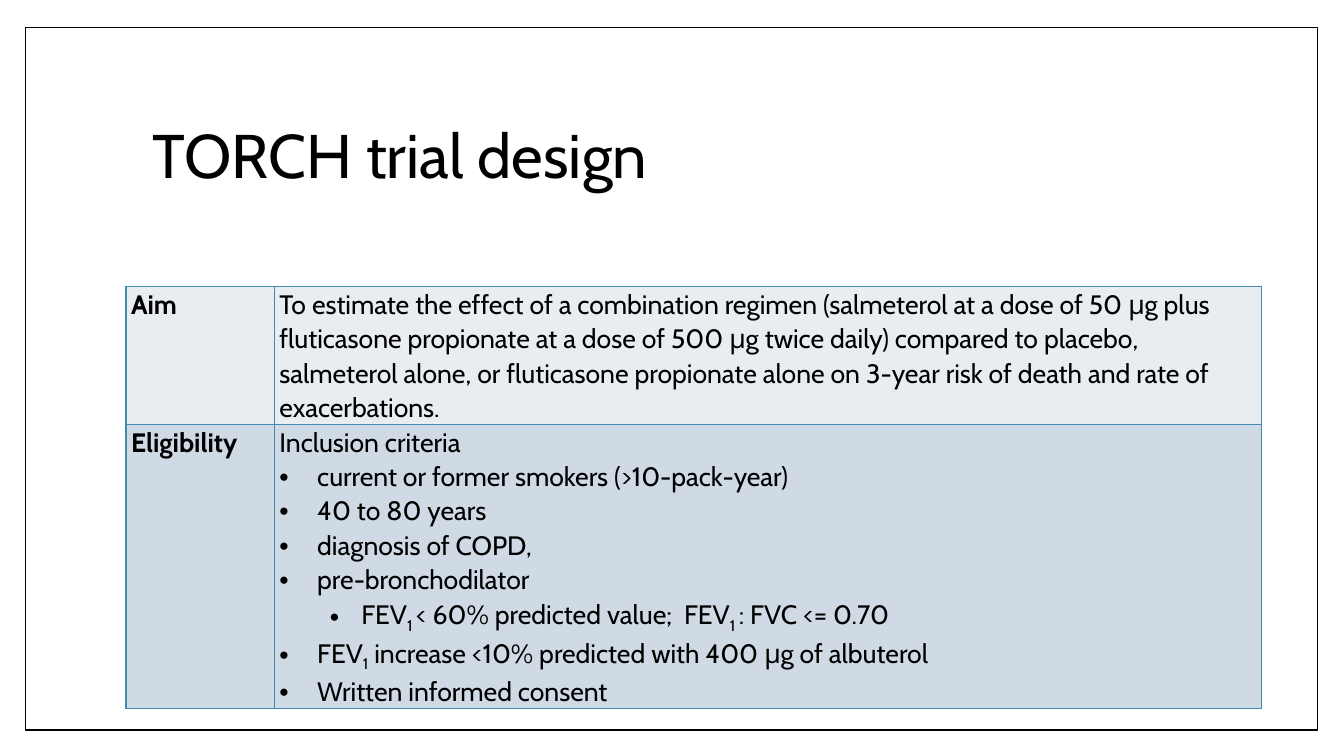
from dataclasses import dataclass

from lxml import etree
from pptx import Presentation
from pptx.dml.color import RGBColor
from pptx.enum.shapes import MSO_SHAPE
from pptx.enum.text import MSO_ANCHOR
from pptx.oxml.ns import qn
from pptx.slide import Slide
from pptx.table import _Cell
from pptx.text.text import TextFrame, _Paragraph
from pptx.util import Pt

RECTANGLE = MSO_SHAPE.RECTANGLE
MIDDLE = MSO_ANCHOR.MIDDLE

BLACK = RGBColor(0x00, 0x00, 0x00)
WHITE = RGBColor(0xFF, 0xFF, 0xFF)
BORDER_BLUE = RGBColor(0x41, 0x8A, 0xB3)
LIGHT_BAND = RGBColor(0xE9, 0xED, 0xF2)
DARK_BAND = RGBColor(0xCF, 0xDA, 0xE5)

FONT = "Cabin"
TITLE_SIZE = Pt(44)
BODY_SIZE = Pt(19)
COLUMN_WIDTHS = (Pt(106), Pt(705))
# Left margin and first-line indent of each bullet level
BULLET_INDENTS = ((Pt(27), Pt(-27)), (Pt(58.5), Pt(-22.5)))


@dataclass(frozen=True)
class Run:
    text: str
    subscript: bool = False


@dataclass(frozen=True)
class Line:
    runs: tuple[Run, ...]
    level: int | None = None  # None means no bullet


@dataclass(frozen=True)
class Row:
    label: str
    lines: tuple[Line, ...]
    fill: RGBColor
    height: Pt


def line(text: str, level: int | None = None) -> Line:
    return Line((Run(text),), level)


ROWS = (
    Row(
        "Aim",
        (
            line(
                "To estimate the effect of a combination regimen (salmeterol at a dose "
                "of 50 μg plus fluticasone propionate at a dose of 500 μg twice daily) "
                "compared to placebo, salmeterol alone, or fluticasone propionate alone "
                "on 3-year risk of death and rate of exacerbations."
            ),
        ),
        LIGHT_BAND,
        Pt(98),
    ),
    Row(
        "Eligibility",
        (
            line("Inclusion criteria"),
            line("current or former smokers (>10-pack-year)", 0),
            line("40 to 80 years", 0),
            line("diagnosis of COPD,", 0),
            line("pre-bronchodilator", 0),
            Line(
                (
                    Run("FEV"),
                    Run("1 ", subscript=True),
                    Run("< 60% predicted value;  FEV"),
                    Run("1 ", subscript=True),
                    Run(": FVC <= 0.70"),
                ),
                1,
            ),
            Line(
                (
                    Run("FEV"),
                    Run("1", subscript=True),
                    Run(" increase <10% predicted with 400 μg of albuterol"),
                ),
                0,
            ),
            line("Written informed consent", 0),
        ),
        DARK_BAND,
        Pt(202),
    ),
)


def add_run(p: _Paragraph, run: Run, size: Pt, bold: bool = False) -> None:
    r = p.add_run()
    r.text = run.text
    r.font.name = FONT
    r.font.size = size
    r.font.bold = bold
    r.font.color.rgb = BLACK
    if run.subscript:
        r._r.get_or_add_rPr().set("baseline", "-25000")


def add_bullet(p: _Paragraph, level: int) -> None:
    margin, indent = BULLET_INDENTS[level]
    p.level = level
    pPr = p._p.get_or_add_pPr()
    pPr.set("marL", str(margin))
    pPr.set("indent", str(indent))
    etree.SubElement(pPr, qn("a:buFont"), typeface="Arial")
    etree.SubElement(pPr, qn("a:buChar"), char="•")


def write_lines(tf: TextFrame, lines: tuple[Line, ...], bold: bool) -> None:
    for i, item in enumerate(lines):
        p = tf.add_paragraph() if i else tf.paragraphs[0]
        p.line_spacing = 1.07
        if item.level is not None:
            add_bullet(p, item.level)
        for run in item.runs:
            add_run(p, run, BODY_SIZE, bold)


def add_borders(cell: _Cell) -> None:
    tcPr = cell._tc.get_or_add_tcPr()
    for side in ("lnL", "lnR", "lnT", "lnB"):
        ln = etree.SubElement(tcPr, qn(f"a:{side}"), w=str(Pt(1)))
        solid = etree.SubElement(ln, qn("a:solidFill"))
        etree.SubElement(solid, qn("a:srgbClr"), val=str(BORDER_BLUE))


def fill_cell(cell: _Cell, lines: tuple[Line, ...], fill: RGBColor, bold: bool) -> None:
    cell.margin_left = cell.margin_right = Pt(3.6)
    cell.margin_top = cell.margin_bottom = Pt(0)
    add_borders(cell)
    cell.fill.solid()
    cell.fill.fore_color.rgb = fill
    write_lines(cell.text_frame, lines, bold)


def add_frame(s: Slide) -> None:
    sp = s.shapes.add_shape(RECTANGLE, Pt(18), Pt(19.5), Pt(923), Pt(502))
    sp.shadow.inherit = False
    sp.fill.solid()
    sp.fill.fore_color.rgb = WHITE
    sp.line.color.rgb = BLACK
    sp.line.width = Pt(1)


def add_title(s: Slide) -> None:
    sp = s.shapes.add_textbox(Pt(102), Pt(60), Pt(778), Pt(106.5))
    tf = sp.text_frame
    tf.word_wrap = True
    tf.vertical_anchor = MIDDLE
    p = tf.paragraphs[0]
    p.line_spacing = 0.9
    add_run(p, Run("TORCH trial design"), TITLE_SIZE)


def add_design_table(s: Slide) -> None:
    height = sum(row.height for row in ROWS)
    table = s.shapes.add_table(
        len(ROWS), len(COLUMN_WIDTHS), Pt(90), Pt(204.5), sum(COLUMN_WIDTHS), height
    ).table
    table.first_row = False
    table.horz_banding = False
    for column, width in zip(table.columns, COLUMN_WIDTHS):
        column.width = width
    for i, row in enumerate(ROWS):
        table.rows[i].height = row.height
        fill_cell(table.cell(i, 0), (line(row.label),), row.fill, bold=True)
        fill_cell(table.cell(i, 1), row.lines, row.fill, bold=False)


def main() -> None:
    prs = Presentation()
    prs.slide_width = Pt(960)
    prs.slide_height = Pt(540)
    s = prs.slides.add_slide(prs.slide_layouts[6])
    add_frame(s)
    add_design_table(s)
    add_title(s)
    prs.save("out.pptx")


if __name__ == "__main__":
    main()
